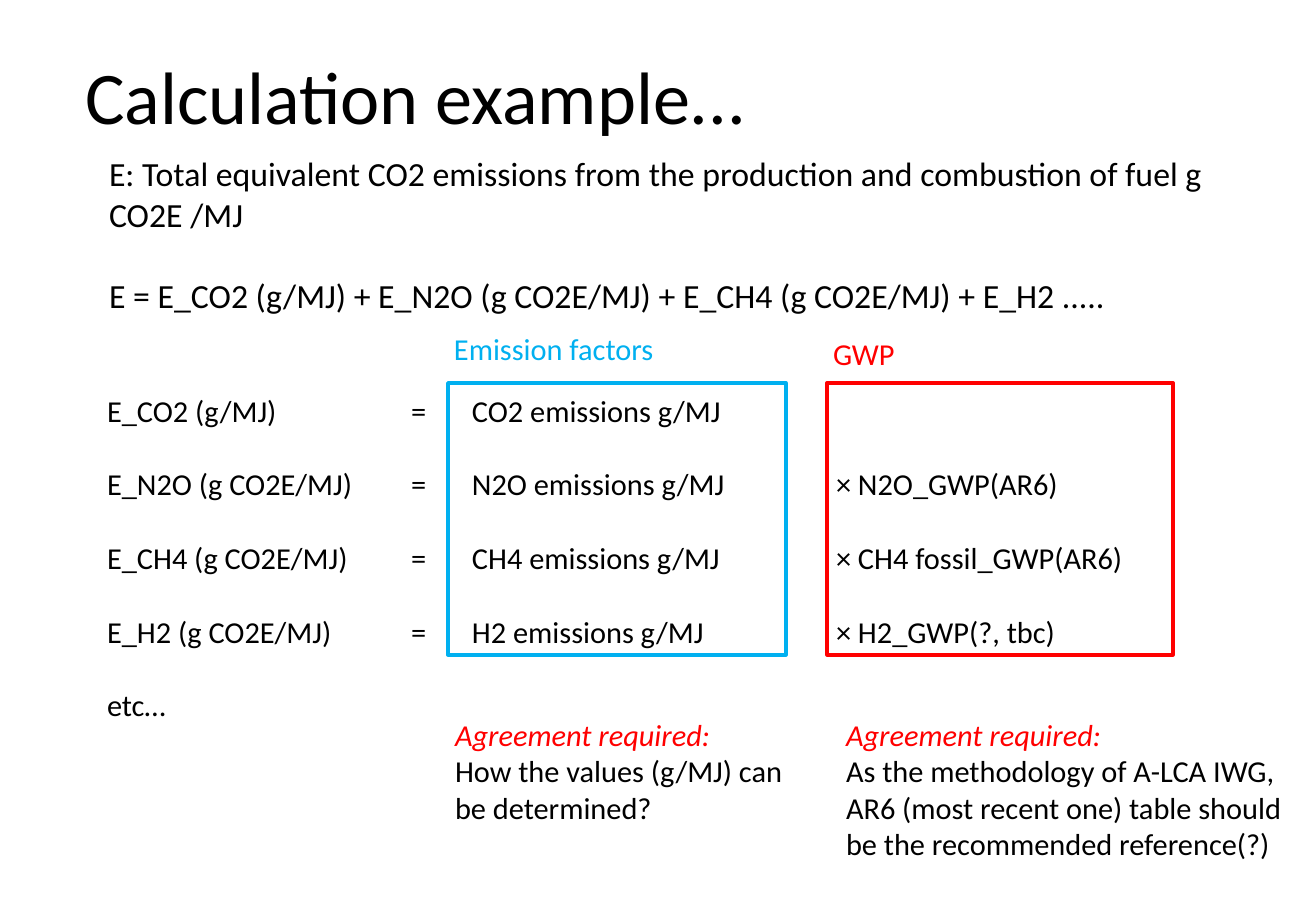
"""Build the slide that shows how total equivalent emissions are calculated."""
from lxml import etree
from pptx import Presentation
from pptx.dml.color import RGBColor
from pptx.enum.shapes import MSO_SHAPE
from pptx.enum.text import MSO_ANCHOR, PP_ALIGN
from pptx.oxml.ns import qn
from pptx.util import Pt

RECT = MSO_SHAPE.RECTANGLE
TOP, MIDDLE = MSO_ANCHOR.TOP, MSO_ANCHOR.MIDDLE
LEFT = PP_ALIGN.LEFT
PX = 914400 / 121.5
THEME = {
    "font": "Calibri",
    "black": RGBColor(0, 0, 0),
    "red": RGBColor(255, 0, 0),
    "blue": RGBColor(0, 176, 240),
    "title": 44,
    "formula": 20,
    "text": 18,
}


def px(n):
    """Turn pixels into EMU."""
    return round(n * PX)


def write(s, lines, size="text", gap=0, top=6, anchor=TOP):
    """Fill a shape with (text, colour, italic) paragraphs."""
    tf = s.text_frame
    frame = {"word_wrap": True, "vertical_anchor": anchor, "margin_top": px(top),
             "margin_bottom": px(6), "margin_left": px(12), "margin_right": px(12)}
    for name, value in frame.items():
        setattr(tf, name, value)
    for i, (text, color, italic) in enumerate(lines):
        p = tf.add_paragraph() if i else tf.paragraphs[0]
        p.alignment = LEFT
        p.space_before = Pt(gap if i else 0)
        r = p.add_run()
        r.text = text
        font = {"name": THEME["font"], "size": Pt(THEME[size]), "italic": italic}
        for name, value in font.items():
            setattr(r.font, name, value)
        r.font.color.rgb = THEME[color]
    return tf


prs = Presentation()
prs.slide_width, prs.slide_height = px(1316), px(911)
slide = prs.slides.add_slide(prs.slide_layouts[5])
shapes = slide.shapes

title = shapes.title
title.left, title.top, title.width, title.height = map(px, (73, 12, 1135, 176))
tf = write(title, [("Calculation example...", "black", False)], "title", anchor=MIDDLE)
tf.paragraphs[0].line_spacing = 0.9

formula = [
    "E: Total equivalent CO2 emissions from the production and combustion of fuel g CO2E /MJ",
    "E = E_CO2 (g/MJ) + E_N2O (g CO2E/MJ) + E_CH4 (g CO2E/MJ) + E_H2 .....",
]
s = shapes.add_textbox(*map(px, (97, 147, 1132, 176)))
write(s, [(text, "black", False) for text in formula], "formula", gap=24)

equations = [
    "E_CO2 (g/MJ)\t=\tCO2 emissions g/MJ",
    "E_N2O (g CO2E/MJ)\t=\tN2O emissions g/MJ\t× N2O_GWP(AR6)",
    "E_CH4 (g CO2E/MJ)\t=\tCH4 emissions g/MJ\t× CH4 fossil_GWP(AR6)",
    "E_H2 (g CO2E/MJ)\t=\tH2 emissions g/MJ\t× H2_GWP(?, tbc)",
    "etc…",
]
s = shapes.add_textbox(*map(px, (95, 349, 1114, 454)))
tf = write(s, [(text, "black", False) for text in equations], gap=22, top=43)
for p in tf.paragraphs:
    tabs = etree.SubElement(p._p.get_or_add_pPr(), qn("a:tabLst"))
    for stop in (304, 365, 729):
        etree.SubElement(tabs, qn("a:tab"), pos=str(px(stop)), algn="l")

for x, width, color in ((448, 338, "blue"), (827, 346, "red")):
    s = shapes.add_shape(RECT, *map(px, (x, 383, width, 272)))
    s.shadow.inherit = False
    s.fill.background()
    s.line.color.rgb = THEME[color]
    s.line.width = Pt(2)

labels = [
    ("Emission factors", "blue", 442, 324, 230),
    ("GWP", "red", 821, 329, 90),
]
for text, color, x, y, width in labels:
    s = shapes.add_textbox(*map(px, (x, y, width, 49)))
    write(s, [(text, color, False)])

notes = [
    ("How the values (g/MJ) can be determined?", 443, 374, 123),
    ("As the methodology of A-LCA IWG, AR6 (most recent one) table should be the "
     "recommended reference(?)", 834, 467, 159),
]
for text, x, width, height in notes:
    s = shapes.add_textbox(*map(px, (x, 710, width, height)))
    write(s, [("Agreement required:", "red", True), (text, "black", False)])

prs.save("out.pptx")
